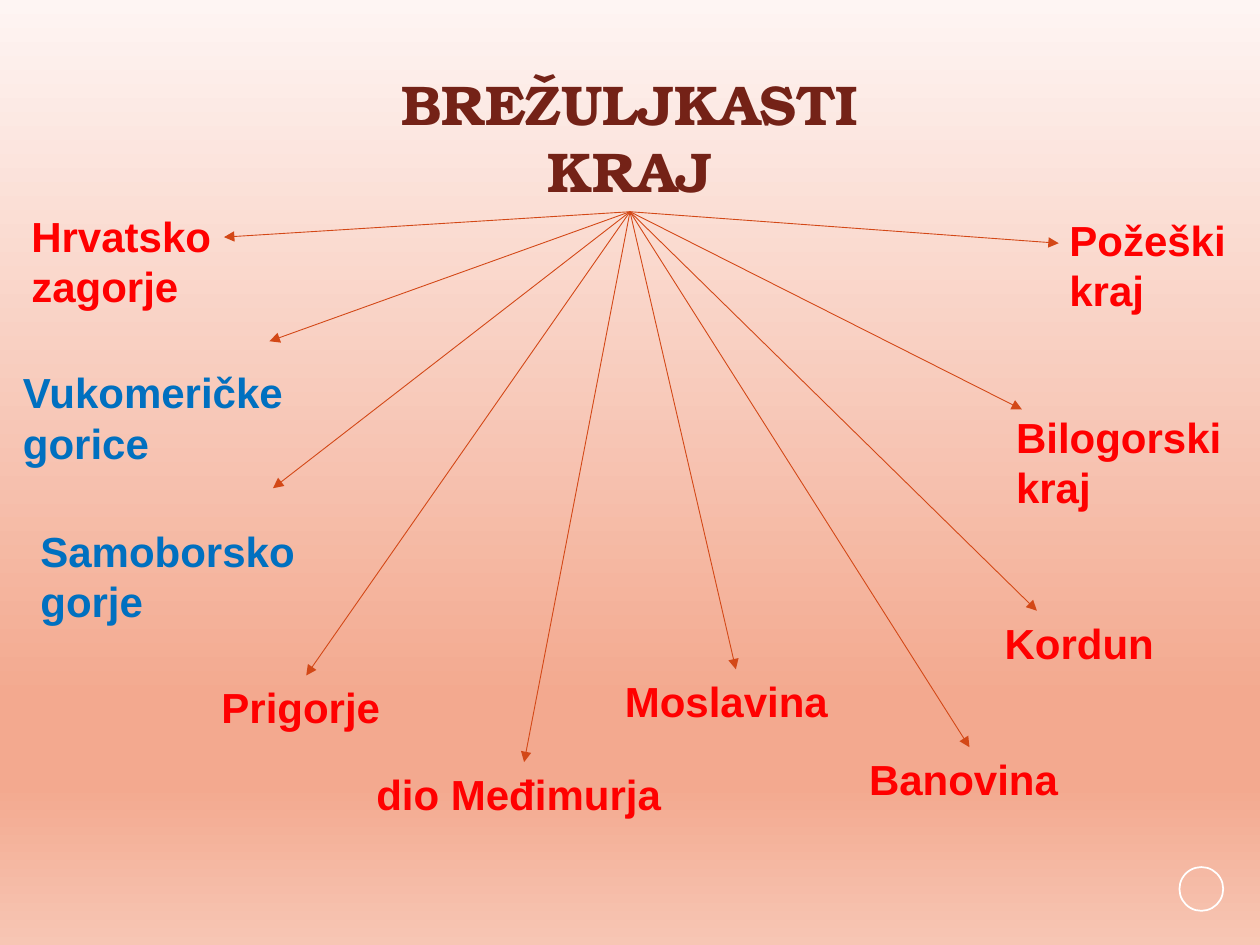
import pptx
import pptx.dml.color
import pptx.enum.dml
import pptx.enum.shapes
import pptx.enum.text
import pptx.oxml
import pptx.oxml.ns
import pptx.util
from dataclasses import dataclass
from lxml import etree

Pt = pptx.util.Pt
qn = pptx.oxml.ns.qn
TOP, BOTTOM = 0, 2


@dataclass(frozen=True)
class Theme:
    title: str = "742217"
    red: str = "FF0000"
    blue: str = "0070C0"
    arrow: str = "D34817"
    ring: str = "FFFFFF"
    backdrop: tuple = ((0, "FEF5F3"), (74, "F3A98F"), (83, "F3A98F"), (100, "F7C6B4"))
    title_font: str = "TeX Gyre Bonum"
    label_font: str = "Arial"
    title_size: int = 32
    label_size: int = 24


THEME = Theme()

# Region name, colour, box (left, top, width, height), arrow tip;
# without a tip the arrow is joined to the middle of the label's top side
REGIONS = (
    ("Hrvatsko zagorje", THEME.red, (10.8, 116.5, 118, 65.5), (128, 135.5)),
    ("Vukomeričke gorice", THEME.blue, (6, 206, 165, 65.5), (154, 195)),
    ("Samoborsko gorje", THEME.blue, (16, 296.5, 165, 65.5), (156, 279)),
    ("Prigorje", THEME.red, (119.5, 386, 111, 36), None),
    ("dio Međimurja", THEME.red, (208, 435.5, 183, 36), None),
    ("Moslavina", THEME.red, (350, 382.5, 141, 36), None),
    ("Banovina", THEME.red, (489.5, 427, 129, 36), None),
    ("Kordun", THEME.red, (567, 349.5, 102, 36), (592.5, 349)),
    ("Bilogorski kraj", THEME.red, (573.5, 231.5, 137, 65.5), (584, 234)),
    ("Požeški kraj", THEME.red, (604, 119, 107, 65.5), (605, 139)),
)


def color(value):
    return pptx.dml.color.RGBColor.from_string(value)


def place(shape, box):
    shape.left, shape.top, shape.width, shape.height = map(Pt, box)


def write(shape, text, font, size, value, align):
    frame = shape.text_frame
    frame.word_wrap = True
    frame.auto_size = pptx.enum.text.MSO_AUTO_SIZE.NONE
    frame.vertical_anchor = pptx.enum.text.MSO_ANCHOR.TOP
    para = frame.paragraphs[0]
    para.alignment = align
    span = para.add_run()
    span.text = text
    span.font.name = font
    span.font.size = Pt(size)
    span.font.bold = True
    span.font.color.rgb = color(value)


def paint_background(page):
    fill = page.background.fill
    fill.gradient()
    fill.gradient_angle = 270
    stops = next(page.element.iter(qn("a:gsLst")))
    for stop in list(stops):
        stops.remove(stop)
    for percent, value in THEME.backdrop:
        stop = etree.SubElement(stops, qn("a:gs"), pos=str(percent * 1000))
        etree.SubElement(stop, qn("a:srgbClr"), val=value)


def add_ring(page, box):
    ring = page.shapes.add_shape(pptx.enum.shapes.MSO_SHAPE.OVAL, *map(Pt, box))
    ring.shadow.inherit = False
    ring.fill.background()
    ring.line.color.rgb = color(THEME.ring)
    ring.line.width = Pt(1)


def add_title(page, box):
    title = page.shapes.title
    place(title, box)
    write(title, "BREŽULJKASTI KRAJ", THEME.title_font, THEME.title_size,
          THEME.title, pptx.enum.text.PP_ALIGN.CENTER)
    return title


def add_label(page, text, value, box):
    label = page.shapes.add_textbox(*map(Pt, box))
    write(label, text, THEME.label_font, THEME.label_size, value,
          pptx.enum.text.PP_ALIGN.LEFT)
    return label


def add_arrow(page, title, label, tip):
    end = tip or (0, 0)
    arrow = page.shapes.add_connector(
        pptx.enum.shapes.MSO_CONNECTOR.STRAIGHT, 0, 0, *map(Pt, end))
    arrow.begin_connect(title, BOTTOM)
    if tip is None:
        arrow.end_connect(label, TOP)
    arrow.line.color.rgb = color(THEME.arrow)
    arrow.line.width = Pt(0.5)
    properties = arrow.element.spPr
    etree.SubElement(properties.find(qn("a:ln")), qn("a:tailEnd"), type="triangle")
    etree.SubElement(properties, qn("a:effectLst"))


def build_map_slide(deck):
    page = deck.slides.add_slide(deck.slide_layouts[5])
    paint_background(page)
    add_ring(page, (674, 495.5, 25, 25))
    title = add_title(page, (207, 36, 306, 85))
    # Regions around the title, each with its arrow
    for text, value, box, tip in REGIONS:
        label = add_label(page, text, value, box)
        add_arrow(page, title, label, tip)


def main():
    deck = pptx.Presentation()
    deck.slide_width, deck.slide_height = Pt(720), Pt(540)
    build_map_slide(deck)
    deck.save("out.pptx")


if __name__ == "__main__":
    main()
